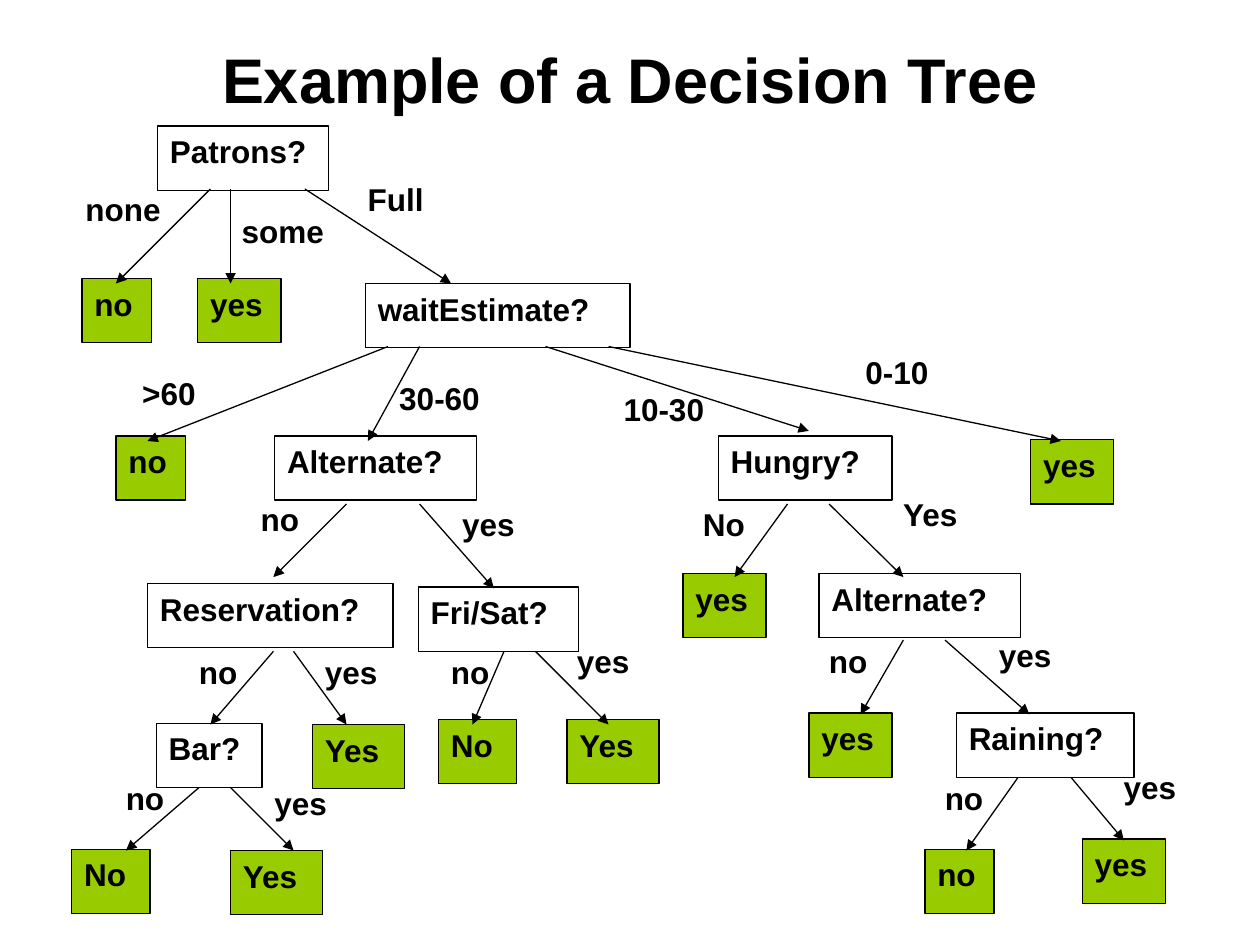
from lxml.etree import SubElement
from pptx import Presentation
from pptx.dml.color import RGBColor
from pptx.enum.shapes import MSO_CONNECTOR, MSO_SHAPE
from pptx.enum.text import MSO_ANCHOR, PP_ALIGN
from pptx.oxml.ns import qn
from pptx.util import Cm, Pt

THEME = {
    "ink": RGBColor(0x00, 0x00, 0x00),
    "leaf": RGBColor(0x99, 0xCC, 0x00),
    "font": "Arial",
    "title": Pt(36),
    "body": Pt(18),
    "line": Pt(0.75),
}
UNIT = 2.54  # cm in one step of the layout grid
BOX_H, LABEL_H = 0.51, 0.5

TITLE = "Example of a Decision Tree"
ROOT = ("Patrons?", (1.25, 1))

# answer, its place, arrow start, arrow end, what it leads to, place of that box
BRANCHES = [
    # Patrons?
    ("none", (0.58, 1.46), (1.67, 1.5), (0.92, 2.25), "no", (0.65, 2.21)),
    ("some", (1.82, 1.63), (1.83, 1.5), (1.83, 2.25), "yes", (1.57, 2.21)),
    ("Full", (2.82, 1.38), (2.42, 1.5), (3.58, 2.25), "waitEstimate?", (2.9, 2.25)),
    # waitEstimate?
    (">60", (1.03, 2.92), (3.08, 2.75), (1.17, 3.5), "no", (0.92, 3.46)),
    ("30-60", (3.07, 2.96), (3.33, 2.75), (2.92, 3.5), "Alternate?", (2.18, 3.46)),
    ("10-30", (4.85, 3.05), (4.33, 2.75), (6.42, 3.42), "Hungry?", (5.7, 3.46)),
    ("0-10", (6.77, 2.75), (4.83, 2.75), (8.42, 3.5), "yes", (8.18, 3.49)),
    # Alternate? after 30-60
    ("no", (1.97, 3.92), (2.75, 4), (2.17, 4.58), "Reservation?", (1.17, 4.63)),
    ("yes", (3.57, 3.96), (3.33, 4), (3.92, 4.67), "Fri/Sat?", (3.32, 4.66)),
    # Reservation?
    ("no", (1.48, 5.13), (2.17, 5.17), (1.67, 5.75), "Bar?", (1.24, 5.74)),
    ("yes", (2.48, 5.13), (2.33, 5.17), (2.75, 5.75), "Yes", (2.48, 5.75)),
    # Bar?
    ("no", (0.9, 6.13), (1.58, 6.25), (1, 6.75), "No", (0.57, 6.74)),
    ("yes", (2.08, 6.17), (1.83, 6.25), (2.33, 6.75), "Yes", (1.83, 6.75)),
    # Fri/Sat?
    ("no", (3.48, 5.13), (4, 5.17), (3.75, 5.75), "No", (3.48, 5.71)),
    ("yes", (4.48, 5.05), (4.25, 5.17), (4.83, 5.75), "Yes", (4.5, 5.71)),
    # Hungry?
    ("No", (5.48, 3.96), (6.25, 4), (5.83, 4.58), "yes", (5.42, 4.55)),
    ("Yes", (7.07, 3.88), (6.58, 4), (7.17, 4.58), "Alternate?", (6.5, 4.55)),
    # Alternate? after Hungry?
    ("no", (6.48, 5.05), (7.17, 5.08), (6.83, 5.67), "yes", (6.42, 5.66)),
    ("yes", (7.83, 5), (7.5, 5.08), (8.17, 5.67), "Raining?", (7.59, 5.66)),
    # Raining?
    ("no", (7.4, 6.13), (8.08, 6.17), (7.67, 6.75), "no", (7.34, 6.74)),
    ("yes", (8.82, 6.05), (8.5, 6.17), (8.92, 6.67), "yes", (8.59, 6.66)),
]

WIDTHS = {
    "no": 0.55, "yes": 0.66, "No": 0.62, "Yes": 0.73,
    "none": 0.85, "some": 0.9, "Full": 0.74,
    ">60": 0.72, "30-60": 0.98, "10-30": 0.98, "0-10": 0.81,
    "Patrons?": 1.36, "waitEstimate?": 2.1, "Alternate?": 1.6, "Hungry?": 1.38,
    "Reservation?": 1.95, "Fri/Sat?": 1.27, "Bar?": 0.84, "Raining?": 1.41,
}


def to_cm(*steps):
    return [Cm(UNIT * n) for n in steps]


def write(sp, text, size=THEME["body"], align=PP_ALIGN.LEFT, anchor=MSO_ANCHOR.TOP):
    tf = sp.text_frame
    tf.word_wrap = True
    tf.vertical_anchor = anchor
    p = tf.paragraphs[0]
    p.alignment = align
    r = p.add_run()
    r.text = text
    for name, value in {"name": THEME["font"], "size": size, "bold": True}.items():
        setattr(r.font, name, value)
    r.font.color.rgb = THEME["ink"]


def draw_line(line):
    line.color.rgb = THEME["ink"]
    line.width = THEME["line"]


def add_box(s, text, at):
    """Draw a question as an open box and a final yes or no as a filled one."""
    sp = s.shapes.add_shape(MSO_SHAPE.RECTANGLE, *to_cm(*at, WIDTHS[text], BOX_H))
    sp.shadow.inherit = False
    if text.endswith("?"):
        sp.fill.background()
    else:
        sp.fill.solid()
        sp.fill.fore_color.rgb = THEME["leaf"]
    draw_line(sp.line)
    write(sp, text)


def add_arrow(s, start, end):
    cxn = s.shapes.add_connector(MSO_CONNECTOR.STRAIGHT, *to_cm(*start, *end))
    draw_line(cxn.line)
    SubElement(cxn.line._get_or_add_ln(), qn("a:tailEnd"), type="triangle")
    SubElement(cxn._element.spPr, qn("a:effectLst"))


def main():
    prs = Presentation()
    prs.slide_width, prs.slide_height = to_cm(10, 7.5)
    s = prs.slides.add_slide(prs.slide_layouts[6])

    title = s.shapes.add_textbox(*to_cm(0.75, 0, 8.5, 1.25))
    write(title, TITLE, THEME["title"], PP_ALIGN.CENTER, MSO_ANCHOR.MIDDLE)

    add_box(s, *ROOT)
    for answer, label_at, start, end, outcome, box_at in BRANCHES:
        add_box(s, outcome, box_at)
        add_arrow(s, start, end)
        label = s.shapes.add_textbox(*to_cm(*label_at, WIDTHS[answer], LABEL_H))
        write(label, answer)

    prs.save("out.pptx")


if __name__ == "__main__":
    main()
